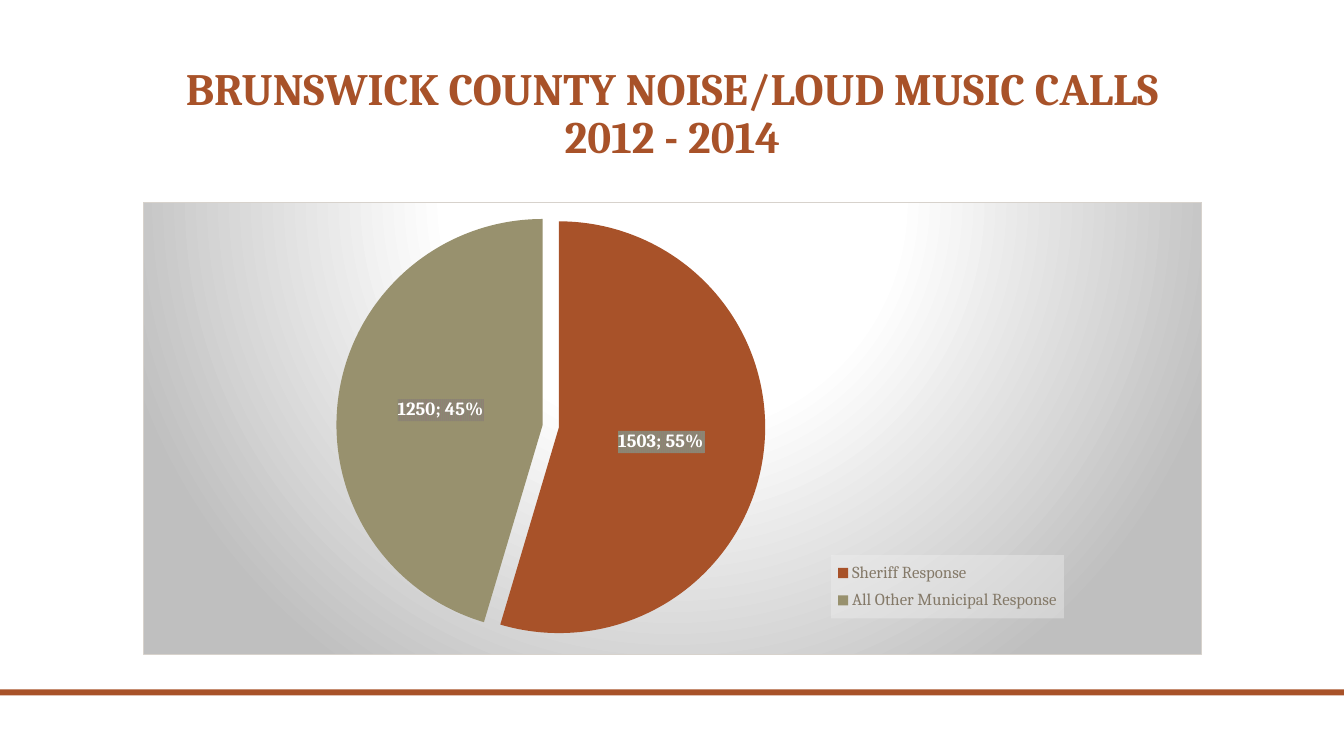
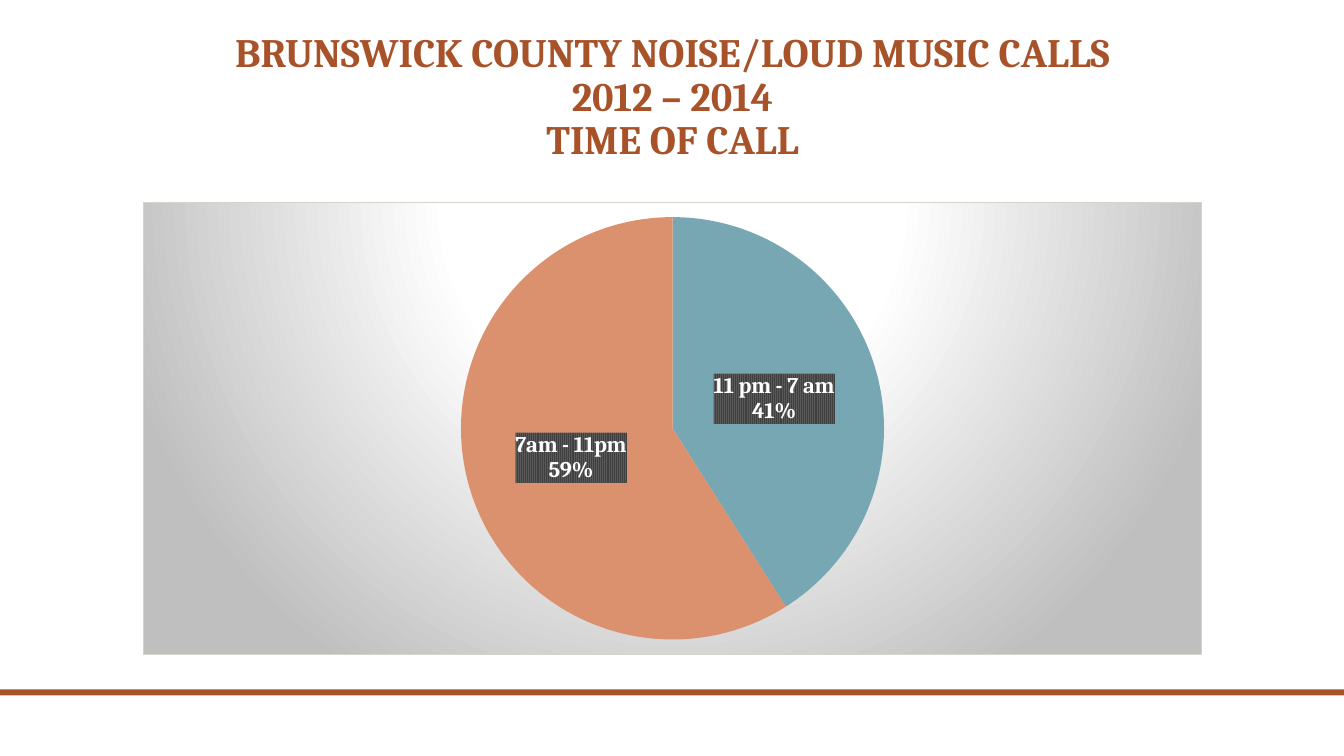
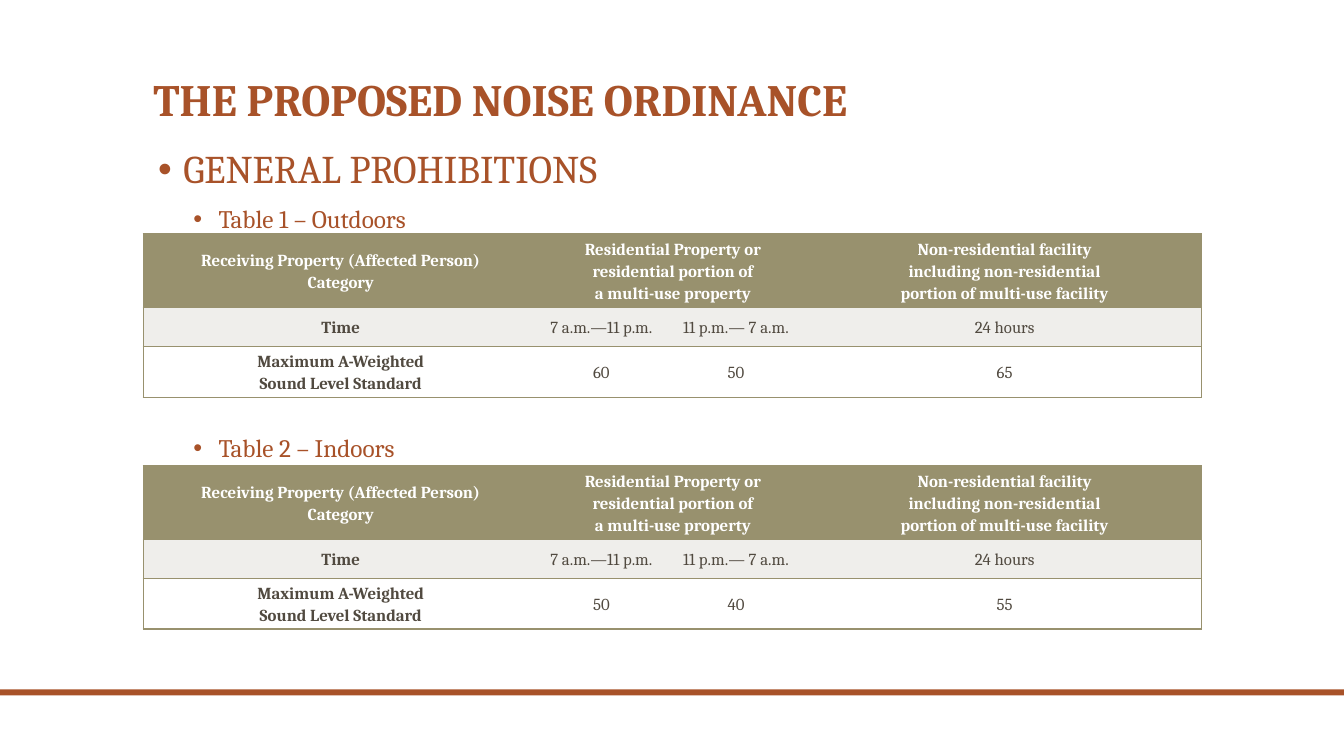
from lxml.etree import SubElement
from pptx import Presentation
from pptx.chart.data import CategoryChartData
from pptx.dml.color import RGBColor
from pptx.enum.chart import XL_CHART_TYPE, XL_LABEL_POSITION, XL_LEGEND_POSITION
from pptx.enum.shapes import MSO_SHAPE
from pptx.enum.text import MSO_ANCHOR, MSO_AUTO_SIZE, PP_ALIGN
from pptx.oxml import parse_xml
from pptx.oxml.ns import nsdecls, qn
from pptx.util import Inches, Pt

FONT = "Cambria"
RUST = RGBColor(0xA8, 0x52, 0x29)
OLIVE = RGBColor(0x98, 0x91, 0x6E)
TEAL = RGBColor(0x76, 0xA7, 0xB2)
SALMON = RGBColor(0xDC, 0x91, 0x6E)
INK = RGBColor(0x51, 0x4A, 0x40)
TAUPE = RGBColor(0x84, 0x79, 0x68)
PALE = RGBColor(0xEF, 0xEE, 0xEB)
WHITE = RGBColor(0xFF, 0xFF, 0xFF)
CHART_BORDER = RGBColor(0xD7, 0xD2, 0xCC)
GREY = RGBColor(0xBF, 0xBF, 0xBF)
LEGEND_GREY = RGBColor(0xF2, 0xF2, 0xF2)
LABEL_DARK = RGBColor(0x40, 0x40, 0x40)
LABEL_MID = RGBColor(0x59, 0x59, 0x59)
LABEL_TAUPE = RGBColor(0x8F, 0x80, 0x74)
LABEL_SAGE = RGBColor(0x8A, 0x88, 0x72)

SLIDE_WIDTH = 13.33
LEFT, WIDTH = 1.42, 10.5
CHART_BOX = (LEFT, 2, WIDTH, 4.5)
COLUMN_WIDTHS = (3.92, 1.25, 1.42, 3.91)
ROW_HEIGHTS = (0.73, 0.39, 0.5)


def inches(box):
    return [Inches(length) for length in box]


def style_font(font, size, color, bold=False):
    font.name = FONT
    font.size = Pt(size)
    font.bold = bold
    font.color.rgb = color


def add_run(paragraph, text, size, color, bold=False):
    run = paragraph.add_run()
    run.text = text
    style_font(run.font, size, color, bold)


# Shared parts: title and footer band
def start_slide(prs, title_lines, size=32, height=1.25, align=PP_ALIGN.CENTER):
    slide = prs.slides.add_slide(prs.slide_layouts[5])
    title = slide.shapes.title
    title.left, title.top, title.width, title.height = inches((LEFT, 0.42, WIDTH, height))
    frame = title.text_frame
    frame.auto_size = MSO_AUTO_SIZE.NONE
    frame.vertical_anchor = MSO_ANCHOR.BOTTOM
    paragraph = frame.paragraphs[0]
    paragraph.alignment = align
    paragraph.line_spacing = 0.9
    for number, line in enumerate(title_lines):
        if number:
            paragraph.add_line_break()
        add_run(paragraph, line, size, RUST, True)

    band = slide.shapes.add_shape(
        MSO_SHAPE.RECTANGLE, *inches((0, 6.84, SLIDE_WIDTH, 0.06)))
    band.shadow.inherit = False
    band.fill.solid()
    band.fill.fore_color.rgb = RUST
    band.line.fill.background()
    return slide


# Chart parts that need XML
def chart_background():
    return parse_xml(
        f'<c:spPr {nsdecls("c", "a")}><a:gradFill><a:gsLst>'
        f'<a:gs pos="0"><a:srgbClr val="{WHITE}"/></a:gs>'
        f'<a:gs pos="39000"><a:srgbClr val="{WHITE}"/></a:gs>'
        f'<a:gs pos="100000"><a:srgbClr val="{GREY}"/></a:gs></a:gsLst>'
        '<a:path path="circle"><a:fillToRect l="50000" t="-80000" r="50000" b="180000"/>'
        f'</a:path></a:gradFill><a:ln w="9525"><a:solidFill><a:srgbClr val="{CHART_BORDER}"/>'
        '</a:solidFill></a:ln></c:spPr>')


def label_background(stripe, ground):
    return parse_xml(
        f'<c:spPr {nsdecls("c", "a")}><a:pattFill prst="narVert">'
        f'<a:fgClr><a:srgbClr val="{stripe}"/></a:fgClr>'
        f'<a:bgClr><a:srgbClr val="{ground}"/></a:bgClr></a:pattFill>'
        '<a:ln><a:noFill/></a:ln></c:spPr>')


def legend_background():
    return parse_xml(
        f'<c:spPr {nsdecls("c", "a")}><a:solidFill><a:srgbClr val="{LEGEND_GREY}">'
        '<a:alpha val="39000"/></a:srgbClr></a:solidFill></c:spPr>')


def manual_layout(x, y, w, h, inner=False):
    target = '<c:layoutTarget val="inner"/>' if inner else ""
    return parse_xml(
        f'<c:layout {nsdecls("c")}><c:manualLayout>{target}'
        '<c:xMode val="edge"/><c:yMode val="edge"/>'
        f'<c:x val="{x}"/><c:y val="{y}"/><c:w val="{w}"/><c:h val="{h}"/>'
        '</c:manualLayout></c:layout>')


def replace_layout(parent, layout, position):
    for old in parent.findall(qn("c:layout")):
        parent.remove(old)
    parent.insert(position, layout)


def add_pie(slide, box, slices, plot_layout, label_size, label_colors,
            separator, show_value=False, explosion=0):
    data = CategoryChartData()
    data.categories = [name for name, _, _ in slices]
    data.add_series("Series 1", [value for _, value, _ in slices])
    chart = slide.shapes.add_chart(XL_CHART_TYPE.PIE, *inches(box), data).chart
    chart.has_title = False
    chart.has_legend = False
    style_font(chart.font, 10, INK)
    chart._chartSpace.find(qn("c:txPr")).addprevious(chart_background())
    plot = chart.plots[0]
    plot.vary_by_categories = True
    replace_layout(chart._chartSpace.chart.plotArea,
                   manual_layout(*plot_layout, inner=True), 0)

    # Slices
    series = plot.series[0]
    for number, (_, _, color) in enumerate(slices):
        point_format = series.points[number].format
        point_format.fill.solid()
        point_format.fill.fore_color.rgb = color
        point_format.line.fill.background()
    if explosion:
        for point in series._element.findall(qn("c:dPt")):
            point.find(qn("c:spPr")).addprevious(
                parse_xml(f'<c:explosion {nsdecls("c")} val="{explosion}"/>'))

    # Labels
    labels = series.data_labels
    labels.show_value = show_value
    labels.show_category_name = not show_value
    labels.show_percentage = True
    labels.position = XL_LABEL_POSITION.CENTER
    style_font(labels.font, label_size, WHITE, True)
    label_xml = labels._element
    label_xml.find(qn("c:txPr")).addprevious(label_background(*label_colors))
    divider = parse_xml(f'<c:separator {nsdecls("c")}/>')
    divider.text = separator
    label_xml.find(qn("c:showBubbleSize")).addnext(divider)
    return chart


def add_legend(chart, layout):
    chart.has_legend = True
    legend = chart.legend
    legend.position = XL_LEGEND_POSITION.RIGHT
    legend.include_in_layout = False
    style_font(legend.font, 12, TAUPE)
    replace_layout(legend._element, manual_layout(*layout), 1)
    legend._element.find(qn("c:txPr")).addprevious(legend_background())


# Bulleted headings, each a (text, size, level) triple
def add_bullets(slide, box, headings):
    frame = slide.shapes.add_textbox(*inches(box)).text_frame
    frame.word_wrap = True
    for number, (text, size, level) in enumerate(headings):
        paragraph = frame.add_paragraph() if number else frame.paragraphs[0]
        paragraph.level = level
        paragraph.line_spacing = 0.9
        if number:
            paragraph.space_before = Pt(10)
        properties = paragraph._p.get_or_add_pPr()
        properties.set("marL", str(Inches(0.3 + 0.35 * level)))
        properties.set("indent", str(-Inches(0.25)))
        bullet_color = SubElement(properties, qn("a:buClr"))
        SubElement(bullet_color, qn("a:srgbClr"), val=str(RUST))
        SubElement(properties, qn("a:buFont"), typeface="Arial")
        SubElement(properties, qn("a:buChar"), char="•")
        add_run(paragraph, text, size, RUST)


# Sound level tables
def set_borders(cell, visible_sides):
    properties = cell._tc.get_or_add_tcPr()
    for position, side in enumerate("LRTB"):
        paint = (f'<a:solidFill><a:srgbClr val="{OLIVE}"/></a:solidFill>'
                 if side in visible_sides else "<a:noFill/>")
        properties.insert(position, parse_xml(
            f'<a:ln{side} {nsdecls("a")} w="12700">{paint}</a:ln{side}>'))


def fill_cell(cell, lines, fill, color, bold):
    cell.fill.solid()
    cell.fill.fore_color.rgb = fill
    cell.vertical_anchor = MSO_ANCHOR.MIDDLE
    cell.margin_left = cell.margin_right = Inches(0.02)
    cell.margin_top = cell.margin_bottom = Inches(0.02)
    for number, line in enumerate(lines):
        frame = cell.text_frame
        paragraph = frame.add_paragraph() if number else frame.paragraphs[0]
        paragraph.alignment = PP_ALIGN.CENTER
        paragraph.line_spacing = 1.15
        add_run(paragraph, line, 12, color, bold)


def add_level_table(slide, top, levels):
    rows = [
        [["Receiving Property (Affected Person)", "Category"],
         ["Residential Property or", "residential portion of", "a multi-use property"],
         [],
         ["Non-residential facility", "including non-residential",
          "portion of multi-use facility"]],
        [["Time"], ["7 a.m.—11 p.m."], ["11 p.m.— 7 a.m."], ["24 hours"]],
        [["Maximum A-Weighted", "Sound Level Standard"]] + [[level] for level in levels],
    ]
    table = slide.shapes.add_table(
        len(rows), len(COLUMN_WIDTHS),
        *inches((LEFT, top, WIDTH, sum(ROW_HEIGHTS)))).table
    for column, width in zip(table.columns, COLUMN_WIDTHS):
        column.width = Inches(width)
    for row, height in zip(table.rows, ROW_HEIGHTS):
        row.height = Inches(height)
    table.cell(0, 1).merge(table.cell(0, 2))
    for r, (row, fill) in enumerate(zip(rows, (OLIVE, PALE, WHITE))):
        for c, lines in enumerate(row):
            cell = table.cell(r, c)
            fill_cell(cell, lines, fill, INK if r else WHITE, r == 0 or c == 0)
            set_borders(cell, "TB" + {0: "L", len(row) - 1: "R"}.get(c, ""))


# Slides
def response_slide(prs):
    slide = start_slide(prs, ["BRUNSWICK COUNTY NOISE/LOUD MUSIC CALLS", "2012 - 2014"])
    chart = add_pie(
        slide, CHART_BOX,
        [("Sheriff Response", 1503, RUST), ("All Other Municipal Response", 1250, OLIVE)],
        (0.19, 0.04, 0.39, 0.91), 13.3, (LABEL_TAUPE, LABEL_SAGE), "; ",
        show_value=True, explosion=4)
    add_legend(chart, (0.65, 0.78, 0.22, 0.14))


def time_slide(prs):
    slide = start_slide(
        prs, ["BRUNSWICK COUNTY NOISE/LOUD MUSIC CALLS", "2012 – 2014", "TIME OF CALL"], 28.8)
    add_pie(slide, CHART_BOX,
            [("11 pm - 7 am", 41, TEAL), ("7am - 11pm", 59, SALMON)],
            (0.3, 0.03, 0.4, 0.94), 16, (LABEL_DARK, LABEL_MID), "\n")


def ordinance_slide(prs):
    slide = start_slide(prs, ["THE PROPOSED NOISE ORDINANCE"], height=0.88,
                        align=PP_ALIGN.LEFT)
    add_bullets(slide, (LEFT, 1.44, WIDTH, 0.9),
                [("GENERAL PROHIBITIONS", 28, 0), ("Table 1 – Outdoors", 18, 1)])
    add_level_table(slide, 2.32, ("60", "50", "65"))
    add_bullets(slide, (LEFT, 4.27, WIDTH, 0.36), [("Table 2 – Indoors", 18, 1)])
    add_level_table(slide, 4.62, ("50", "40", "55"))


def main():
    prs = Presentation()
    prs.slide_width, prs.slide_height = inches((SLIDE_WIDTH, 7.5))
    response_slide(prs)
    time_slide(prs)
    ordinance_slide(prs)
    prs.save("out.pptx")


if __name__ == "__main__":
    main()
